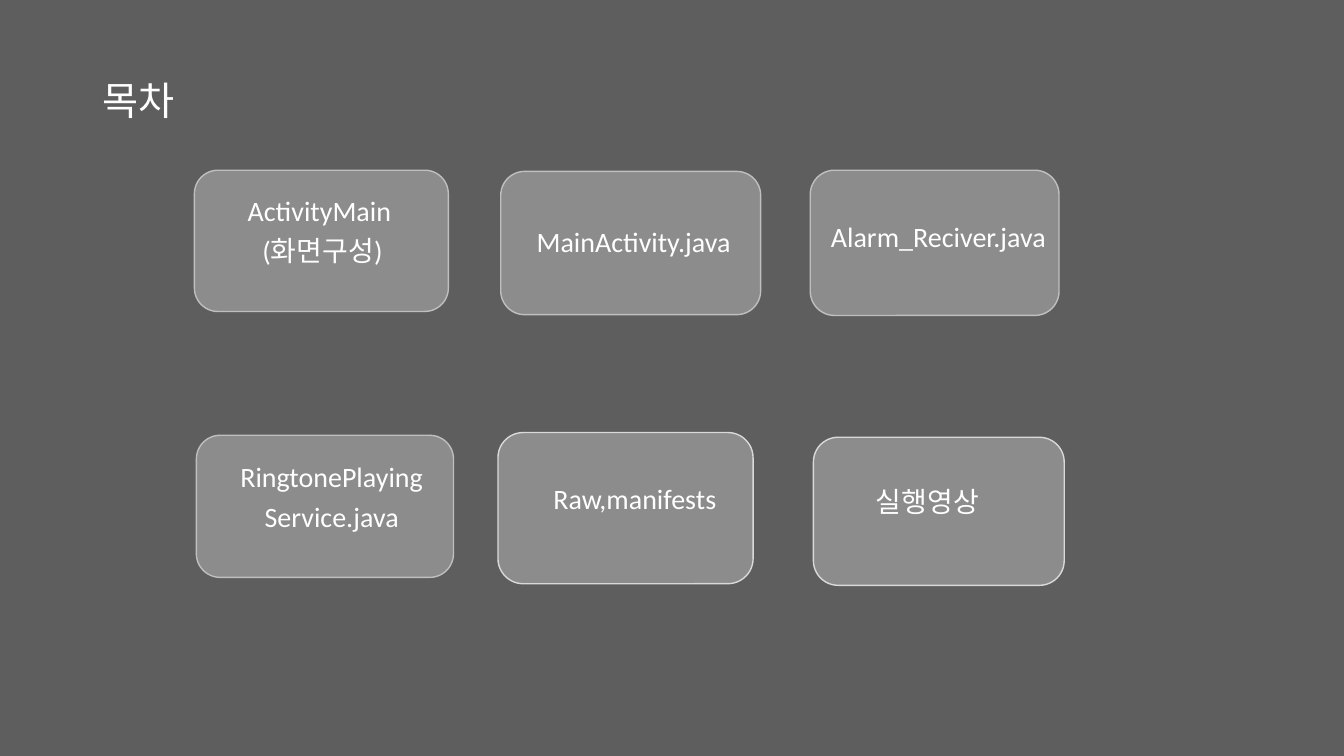
import pptx
import pptx.dml.color
import pptx.enum.shapes
import pptx.enum.text
import pptx.util
from pptx.util import Cm

COLORS = {
    "background": "5E5E5E",
    "card": "8C8C8C",
    "border": "BFBFBF",
    "light_border": "D9D9D9",
    "text": "FFFFFF",
}
LABEL_SIZE = (7.06, 2.62)
CARDS = [
    ("ActivityMain \n(화면구성)", (4.9, 4.29, 6.4, 3.56), (-0.3, 0.28), "border"),
    ("MainActivity.java", (12.62, 4.32, 6.55, 3.61), (-0.18, 1.02), "border"),
    ("Alarm_Reciver.java", (20.42, 4.29, 6.27, 3.66), (-0.3, 0.94), "border"),
    ("RingtonePlaying\nService.java", (4.95, 10.97, 6.48, 3.58), (-0.12, 0.3), "border"),
    ("Raw,manifests", (12.55, 10.9, 6.43, 3.81), (-0.08, 0.91), "light_border"),
]
VIDEO_CARD = ("실행영상", (20.5, 11.02, 6.32, 3.73), (1.32, 1.07), "light_border")


def color(name):
    return pptx.dml.color.RGBColor.from_string(COLORS[name])


def format_spans(para, size):
    for span in para.runs:
        span.font.name = "Calibri"
        span.font.size = pptx.util.Pt(size)
        span.font.color.rgb = color("text")


def draw_heading(page, box):
    page.shapes.title.element.getparent().remove(page.shapes.title.element)
    heading = page.placeholders[1]
    heading.left, heading.top, heading.width, heading.height = map(Cm, box)
    heading.text_frame.text = "목차"
    para = heading.text_frame.paragraphs[0]
    properties = para._p.get_or_add_pPr()
    properties.set("marL", "0")
    properties.set("indent", "0")
    properties.append(pptx.oxml.parse_xml(
        '<a:buNone xmlns:a="http://schemas.openxmlformats.org/drawingml/2006/main"/>'))
    para.line_spacing = 0.9
    para.space_before = pptx.util.Pt(0)
    format_spans(para, 28)


def draw_panel(shapes, box, border):
    panel = shapes.add_shape(
        pptx.enum.shapes.MSO_SHAPE.ROUNDED_RECTANGLE, *map(Cm, box))
    panel.shadow.inherit = False
    panel.fill.solid()
    panel.fill.fore_color.rgb = color("card")
    panel.line.color.rgb = color(border)
    panel.line.width = pptx.util.Pt(1)


def add_label(shapes, text, box, offset, size):
    left, top = box[0] + offset[0], box[1] + offset[1]
    label = shapes.add_textbox(*map(Cm, (left, top, *size)))
    label.text_frame.text = text
    for para in label.text_frame.paragraphs:
        format_spans(para, 20)
    return label.text_frame


def draw_card(page, text, box, offset, border):
    group = page.shapes.add_group_shape()
    draw_panel(group.shapes, box, border)
    frame = add_label(group.shapes, text, box, offset, LABEL_SIZE)
    frame.word_wrap = True
    frame.margin_left = frame.margin_right = frame.margin_top = Cm(0.41)
    frame.margin_bottom = Cm(0)
    for para in frame.paragraphs:
        para.alignment = pptx.enum.text.PP_ALIGN.CENTER
        para.line_spacing = 0.9
        para.space_after = pptx.util.Pt(7)


def draw_video_card(page, text, box, offset, border):
    draw_panel(page.shapes, box, border)
    frame = add_label(page.shapes, text, box, offset, (3.35, 1.12))
    frame.word_wrap = False
    frame.auto_size = pptx.enum.text.MSO_AUTO_SIZE.SHAPE_TO_FIT_TEXT


def main():
    deck = pptx.Presentation()
    deck.slide_width, deck.slide_height = Cm(33.87), Cm(19.05)
    page = deck.slides.add_slide(deck.slide_layouts[1])
    page.background.fill.solid()
    page.background.fill.fore_color.rgb = color("background")
    draw_heading(page, (2.34, 1.93, 29.21, 15.21))
    for card in CARDS:
        draw_card(page, *card)
    draw_video_card(page, *VIDEO_CARD)
    deck.save("out.pptx")


if __name__ == "__main__":
    main()
